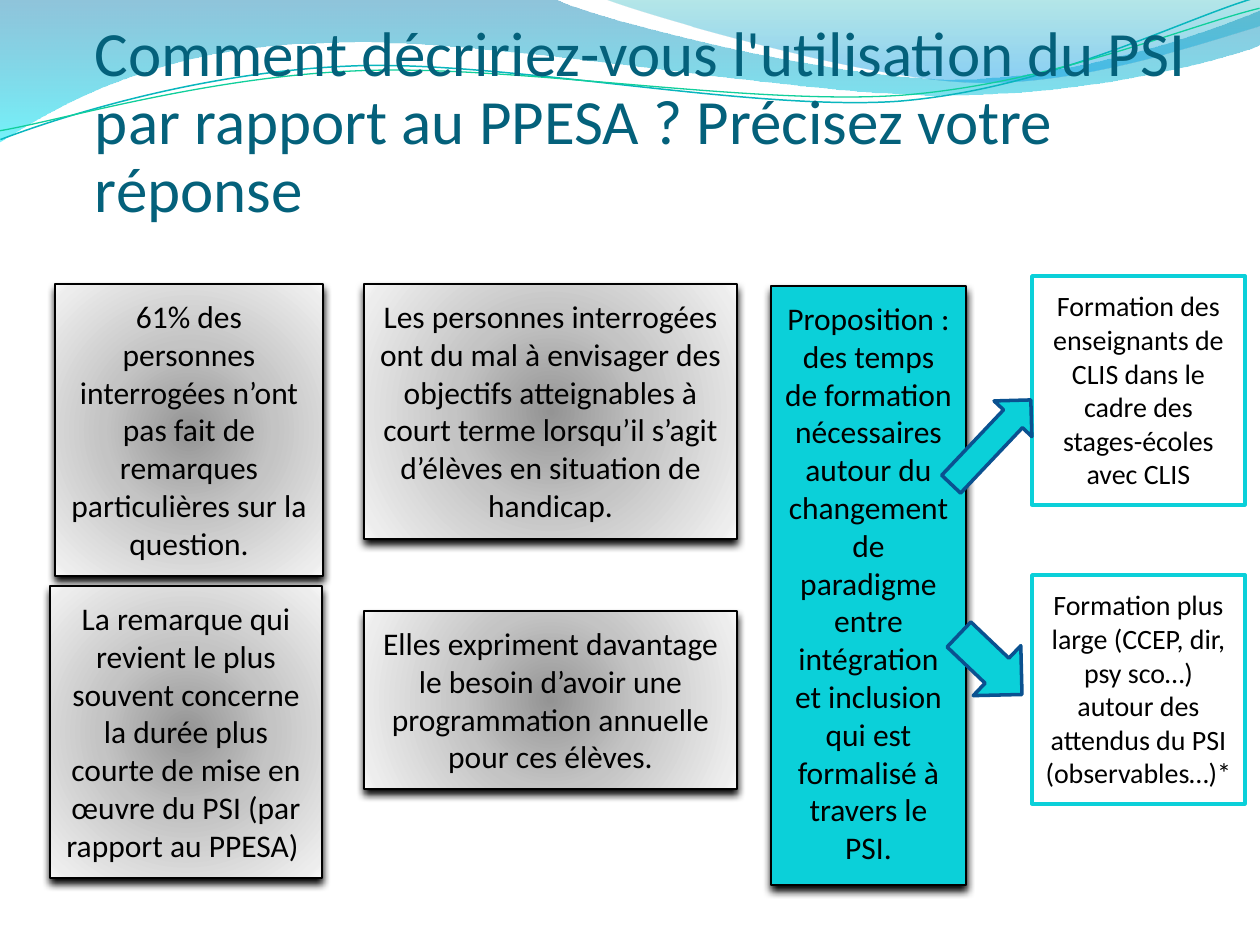
import pptx
import pptx.util
import pptx.dml.color
import pptx.enum.shapes
import pptx.enum.text
import pptx.oxml.ns
from lxml import etree

EMU_PER_PX = 914400 / 126
INSET = 13

INK = "000000"
WHITE = "FFFFFF"
TITLE_BLUE = "04617B"
TURQUOISE = "0BD0D9"
ARROW_EDGE = "0A5190"
# Gradient stops: position %, colour, opacity %
GREY_GLOW = [(0, "949494", 100), (43, "C4C4C4", 100), (93, "EDEDED", 100), (100, "F9F9F9", 100)]
LEFT_WATER = [(0, "0079AD", 44), (100, "00E9F7", 55)]
RIGHT_WATER = [(0, "00ABB4", 29), (80, "0099E4", 44), (100, "0099E4", 44)]
RIPPLE_TILT = 357.3

RECTANGLE = pptx.enum.shapes.MSO_SHAPE.RECTANGLE
DOWN_ARROW = pptx.enum.shapes.MSO_SHAPE.DOWN_ARROW
ALIGN = pptx.enum.text.PP_ALIGN
ANCHOR = pptx.enum.text.MSO_ANCHOR
AUTO_SIZE = pptx.enum.text.MSO_AUTO_SIZE


def px(length):
    return pptx.util.Emu(round(length * EMU_PER_PX))


def rgb(colour):
    return pptx.dml.color.RGBColor.from_string(colour)


def add_xml(parent, tag, **attributes):
    child = etree.SubElement(parent, pptx.oxml.ns.qn(tag))
    for name, value in attributes.items():
        child.set(name, str(value))
    return child


def add_colour(parent, colour, opacity=100):
    add_xml(add_xml(parent, "a:srgbClr", val=colour), "a:alpha", val=opacity * 1000)


def set_gradient(shape, stops, radial=False):
    shape.fill.gradient()
    gradient = shape._element.spPr.find(pptx.oxml.ns.qn("a:gradFill"))
    for child in list(gradient):
        gradient.remove(child)
    stop_list = add_xml(gradient, "a:gsLst")
    for position, colour, opacity in stops:
        add_colour(add_xml(stop_list, "a:gs", pos=position * 1000), colour, opacity)
    if radial:
        centre = add_xml(gradient, "a:path", path="circle")
        add_xml(centre, "a:fillToRect", l=50000, t=50000, r=50000, b=50000)
    else:
        add_xml(gradient, "a:lin", ang=5400000, scaled=0)


def paint(shape, fill=None, line=None, width=0.75, shadow=False):
    """Fill is a hex colour, a list of gradient stops for a central glow, or None."""
    if isinstance(fill, list):
        set_gradient(shape, fill, radial=True)
    elif fill:
        shape.fill.solid()
        shape.fill.fore_color.rgb = rgb(fill)
    else:
        shape.fill.background()
    if line:
        shape.line.color.rgb = rgb(line)
        shape.line.width = pptx.util.Pt(width)
    else:
        shape.line.fill.background()
    shape.shadow.inherit = False
    if shadow:
        effects = shape._element.spPr.find(pptx.oxml.ns.qn("a:effectLst"))
        cast = add_xml(effects, "a:outerShdw", blurRad=pptx.util.Pt(4.5), dist=pptx.util.Pt(3),
                       dir=5400000, rotWithShape=0)
        add_colour(cast, INK)


def write(shape, text, size=18, colour=INK, align=ALIGN.CENTER, anchor=ANCHOR.TOP,
          spacing=None, auto_size=AUTO_SIZE.SHAPE_TO_FIT_TEXT):
    frame = shape.text_frame
    frame.word_wrap = True
    frame.auto_size = auto_size
    frame.vertical_anchor = anchor
    frame.margin_left = frame.margin_right = px(INSET)
    frame.margin_top = frame.margin_bottom = px(INSET)
    paragraph = frame.paragraphs[0]
    paragraph.alignment = align
    paragraph.line_spacing = spacing
    run = paragraph.add_run()
    run.text = text
    run.font.name = "Calibri"
    run.font.size = pptx.util.Pt(size)
    run.font.color.rgb = rgb(colour)


def add_box(slide, box, text, size=18, **look):
    card = slide.shapes.add_shape(RECTANGLE, *map(px, box))
    paint(card, **look)
    write(card, text, size=size)


def add_path(slide, box, start, segments, close=False):
    """Draw segments that hold one point (line) or three points (cubic curve)."""
    left, top = box[:2]
    points = [(px(left + x), px(top + y)) for x, y in [start, *sum(segments, [])]]
    builder = slide.shapes.build_freeform(*points[0], scale=1.0)
    builder.add_line_segments(points[1:], close=close)
    outline = builder.convert_to_shape()
    lines = iter(list(outline._element.iter(pptx.oxml.ns.qn("a:lnTo"))))
    for segment in segments:
        steps = [next(lines) for _ in segment]
        if len(steps) == 3:
            curve = etree.Element(pptx.oxml.ns.qn("a:cubicBezTo"))
            steps[0].addprevious(curve)
            for step in steps:
                curve.append(step[0])
                step.getparent().remove(step)
    return outline


def add_waves(slide, box):
    waters = [
        (LEFT_WATER, (0, 0), [
            [(554, -1)],
            [(600, 21), (837, 79), (955, 79)], [(1074, 79), (1207, 33), (1260, 11)],
            [(1261, 45)],
            [(1239, 55), (1096, 96), (940, 95)], [(784, 95), (481, 35), (324, 43)],
            [(163, 45), (58, 105), (-1, 142)]]),
        (RIGHT_WATER, (604, -1), [
            [(641, 14), (859, 78), (969, 82)], [(1079, 87), (1211, 40), (1260, 26)],
            [(1260, 0)]]),
    ]
    for stops, start, segments in waters:
        water = add_path(slide, box, start, segments, close=True)
        paint(water)
        set_gradient(water, stops)
    ripples = [
        ("09B6BE", 0.85, (-2, 110), [
            [(59, 90), (200, 52), (350, 53)], [(499, 53), (745, 117), (896, 114)],
            [(1049, 109), (1184, 45), (1260, 27)]]),
        ("10CF9B", 0.75, (-2, 101), [
            [(57, 94), (207, 57), (357, 58)], [(509, 58), (750, 112), (902, 108)],
            [(1052, 103), (1189, 52), (1262, 38)]]),
    ]
    for colour, width, start, segments in ripples:
        ripple = add_path(slide, box, start, segments)
        ripple.rotation = RIPPLE_TILT
        paint(ripple, line=colour, width=width)


def add_title(slide, box):
    title = slide.shapes.add_textbox(*map(px, box))
    write(title, "Comment décririez-vous l'utilisation du PSI par rapport au PPESA ? "
          "Précisez votre réponse", size=36, colour=TITLE_BLUE, align=ALIGN.LEFT,
          anchor=ANCHOR.MIDDLE, spacing=0.9, auto_size=AUTO_SIZE.NONE)


def add_findings(slide, box):
    left, top = box[:2]
    findings = [
        (5, 0, 268, 292, "61% des personnes interrogées n’ont pas fait de remarques "
         "particulières sur la question."),
        (0, 302, 272, 292, "La remarque qui revient le plus souvent concerne la durée plus "
         "courte de mise en œuvre du PSI (par rapport au PPESA) "),
        (314, 0, 373, 255, "Les personnes interrogées ont du mal à envisager des objectifs "
         "atteignables à court terme lorsqu’il s’agit d’élèves en situation de handicap."),
        (314, 327, 373, 178, "Elles expriment davantage le besoin d’avoir une programmation "
         "annuelle pour ces élèves."),
    ]
    for x, y, width, height, finding in findings:
        add_box(slide, (left + x, top + y, width, height), finding,
                fill=GREY_GLOW, line=INK, shadow=True)


def add_proposal(slide, box):
    left, top = box[:2]
    add_box(slide, (left, top + 10, 195, 599),
            "Proposition : des temps de formation nécessaires autour du changement de "
            "paradigme entre intégration et inclusion qui est formalisé à travers le PSI.",
            fill=TURQUOISE, line=INK, shadow=True)
    trainings = [
        "Formation des enseignants de CLIS dans le cadre des stages-écoles avec CLIS",
        "Formation plus large (CCEP, dir, psy sco…) autour des attendus du PSI "
        "(observables…)*",
    ]
    for row, training in enumerate(trainings):
        add_box(slide, (left + 261, top + row * 299, 213, 229), training, size=16,
                fill=WHITE, line=TURQUOISE, width=2)
    for x, y, width, height, angle in [(194, 108, 52, 116, 223.4), (185, 345, 69, 87, 313.6)]:
        arrow = slide.shapes.add_shape(DOWN_ARROW, px(left + x), px(top + y),
                                       px(width), px(height))
        arrow.rotation = angle
        paint(arrow, fill=TURQUOISE, line=ARROW_EDGE, width=2)


def main():
    deck = pptx.Presentation()
    deck.slide_width, deck.slide_height = px(1260), px(945)
    slide = deck.slides.add_slide(deck.slide_layouts[6])
    add_waves(slide, (0, 0, 1260, 142))
    add_title(slide, (82, 45, 1134, 158))
    add_findings(slide, (50, 284, 687, 594))
    add_proposal(slide, (771, 276, 474, 609))
    deck.save("out.pptx")


if __name__ == "__main__":
    main()
